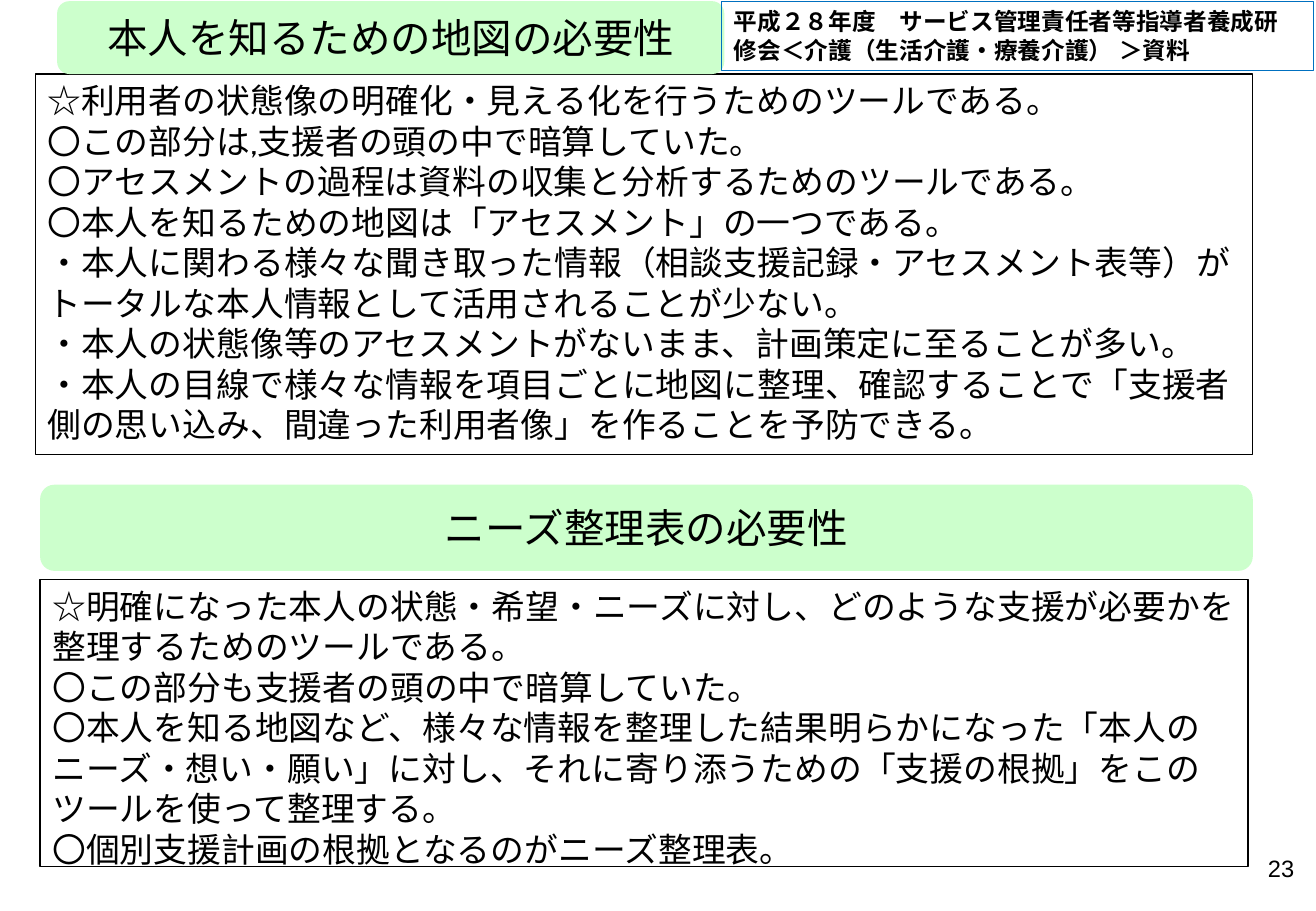
from dataclasses import dataclass

from lxml.etree import SubElement
from pptx import Presentation
from pptx.dml.color import RGBColor
from pptx.enum.shapes import MSO_SHAPE as Shape
from pptx.enum.text import MSO_ANCHOR as Anchor, MSO_AUTO_SIZE as AutoSize, PP_ALIGN as Align
from pptx.oxml.ns import qn
from pptx.util import Inches, Pt


@dataclass(frozen=True)
class Theme:
    ink: str = "000000"
    heading_fill: str = "CCFFCC"
    source_line: str = "0070C0"
    heading_font: str = "Noto Sans CJK JP"
    body_font: str = "Cabin"
    small_font: str = "Arial"
    heading_size: int = 24
    body_size: int = 20
    small_size: int = 14
    line_width: float = 0.75


class SlideBuilder:
    def __init__(self, slide, theme):
        self.slide = slide
        self.theme = theme

    def _write(self, shape, lines, font, size, align=Align.LEFT, anchor=Anchor.TOP, bold=False):
        frame = shape.text_frame
        frame.text = "\n".join(lines)
        frame.word_wrap = True
        frame.vertical_anchor = anchor
        for paragraph in frame.paragraphs:
            paragraph.alignment = align
            paragraph.space_before = Pt(0)
            for run in paragraph.runs:
                run.font.size = Pt(size)
                run.font.bold = bold
                run.font.name = font
                run.font.color.rgb = RGBColor.from_string(self.theme.ink)
                # East Asian characters use the same font
                SubElement(run._r.get_or_add_rPr(), qn("a:ea"), typeface=font)

    def _outline(self, shape, color):
        shape.line.color.rgb = RGBColor.from_string(color)
        shape.line.width = Pt(self.theme.line_width)

    def heading(self, text, *box):
        band = self.slide.shapes.add_shape(
            Shape.FLOWCHART_ALTERNATE_PROCESS, *map(Inches, box))
        band.shadow.inherit = False
        band.fill.solid()
        band.fill.fore_color.rgb = RGBColor.from_string(self.theme.heading_fill)
        band.line.fill.background()
        self._write(band, [text], self.theme.heading_font, self.theme.heading_size,
                    Align.CENTER, Anchor.MIDDLE)

    def framed_list(self, placeholder, lines, *box):
        placeholder.left, placeholder.top, placeholder.width, placeholder.height = map(Inches, box)
        self._write(placeholder, lines, self.theme.body_font, self.theme.body_size)
        placeholder.text_frame.auto_size = AutoSize.SHAPE_TO_FIT_TEXT
        self._outline(placeholder, self.theme.ink)
        for paragraph in placeholder.text_frame.paragraphs:
            properties = paragraph._p.get_or_add_pPr()
            properties.set("marL", "0")
            properties.set("indent", "0")
            SubElement(properties, qn("a:buNone"))

    def small_text(self, text, *box, align=Align.LEFT, bold=False, line=None):
        label = self.slide.shapes.add_textbox(*map(Inches, box))
        self._write(label, [text], self.theme.small_font, self.theme.small_size, align, bold=bold)
        if line:
            self._outline(label, line)


MAP_POINTS = [
    "☆利用者の状態像の明確化・見える化を行うためのツールである。",
    "〇この部分は,支援者の頭の中で暗算していた。",
    "〇アセスメントの過程は資料の収集と分析するためのツールである。",
    "〇本人を知るための地図は「アセスメント」の一つである。",
    "・本人に関わる様々な聞き取った情報（相談支援記録・アセスメント表等）が"
    "トータルな本人情報として活用されることが少ない。",
    "・本人の状態像等のアセスメントがないまま、計画策定に至ることが多い。",
    "・本人の目線で様々な情報を項目ごとに地図に整理、確認することで"
    "「支援者側の思い込み、間違った利用者像」を作ることを予防できる。",
]
NEEDS_POINTS = [
    "☆明確になった本人の状態・希望・ニーズに対し、どのような支援が必要かを"
    "整理するためのツールである。",
    "〇この部分も支援者の頭の中で暗算していた。",
    "〇本人を知る地図など、様々な情報を整理した結果明らかになった"
    "「本人のニーズ・想い・願い」に対し、それに寄り添うための"
    "「支援の根拠」をこのツールを使って整理する。",
    "〇個別支援計画の根拠となるのがニーズ整理表。",
]


def main():
    deck = Presentation()
    deck.slide_width, deck.slide_height = Inches(10.83), Inches(7.5)
    slide = deck.slides.add_slide(deck.slide_layouts[1])
    theme = Theme()
    builder = SlideBuilder(slide, theme)

    # Map of the person
    builder.heading("本人を知るための地図の必要性", 0.47, 0.01, 5.49, 0.6)
    builder.framed_list(slide.shapes.title, MAP_POINTS, 0.29, 0.61, 10.02, 3.13)

    # Needs table
    builder.heading("ニーズ整理表の必要性", 0.33, 3.99, 9.98, 0.71)
    builder.framed_list(slide.placeholders[1], NEEDS_POINTS, 0.33, 4.77, 9.94, 2.46)

    # Source of the material and page number
    builder.small_text("平成２８年度　サービス管理責任者等指導者養成研修会＜介護（生活介護・療養介護） ＞資料",
                       5.94, 0.01, 4.87, 0.57, bold=True, line=theme.source_line)
    builder.small_text("23", 8.22, 6.98, 2.53, 0.52, align=Align.RIGHT)

    deck.save("out.pptx")


if __name__ == "__main__":
    main()
